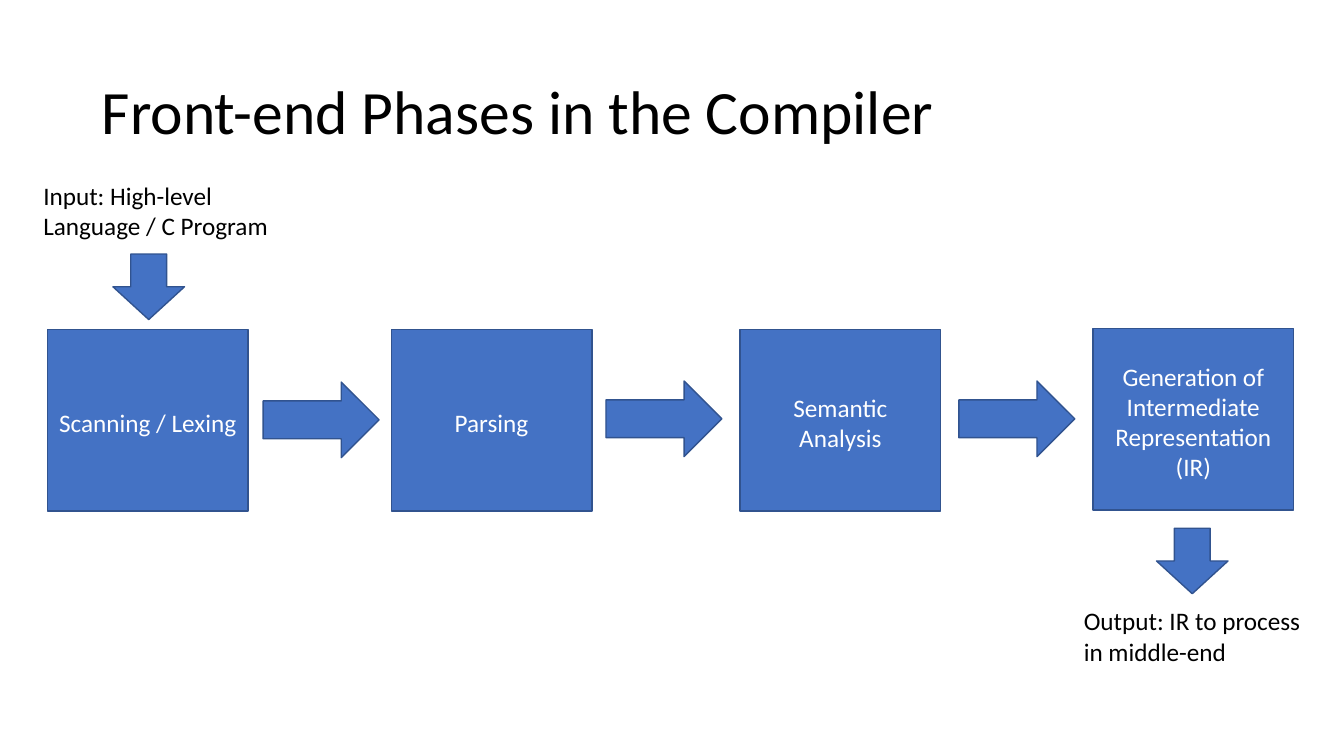
from pptx import Presentation
from pptx.dml.color import RGBColor
from pptx.enum.shapes import MSO_SHAPE
from pptx.enum.text import MSO_ANCHOR, PP_ALIGN
from pptx.util import Pt

PX = 9144
BLUE = RGBColor(0x44, 0x72, 0xC4)
DARK_BLUE = RGBColor(0x31, 0x53, 0x8F)
WHITE = RGBColor(0xFF, 0xFF, 0xFF)
BLACK = RGBColor(0x00, 0x00, 0x00)
RECTANGLE = MSO_SHAPE.RECTANGLE
RIGHT_ARROW = MSO_SHAPE.RIGHT_ARROW
DOWN_ARROW = MSO_SHAPE.DOWN_ARROW
TOP, MIDDLE = MSO_ANCHOR.TOP, MSO_ANCHOR.MIDDLE
LEFT, CENTER = PP_ALIGN.LEFT, PP_ALIGN.CENTER

presentation = Presentation()
presentation.slide_width = 1333 * PX
presentation.slide_height = 750 * PX
slide = presentation.slides.add_slide(presentation.slide_layouts[6])


def write_text(shape, text, size, color, alignment, anchor, side=0, top=0):
    frame = shape.text_frame
    frame_format = {
        "word_wrap": True,
        "vertical_anchor": anchor,
        "margin_left": side * PX,
        "margin_right": side * PX,
        "margin_top": top * PX,
        "margin_bottom": 0,
    }
    for name, value in frame_format.items():
        setattr(frame, name, value)
    paragraph = frame.paragraphs[0]
    paragraph.alignment = alignment
    run = paragraph.add_run()
    run.text = text
    for name, value in {"name": "Calibri", "size": Pt(size)}.items():
        setattr(run.font, name, value)
    run.font.color.rgb = color


def add_blue_shape(kind, left, top, width, height):
    shape = slide.shapes.add_shape(kind, left * PX, top * PX, width * PX, height * PX)
    shape.shadow.inherit = False
    shape.fill.solid()
    shape.fill.fore_color.rgb = BLUE
    shape.line.color.rgb = DARK_BLUE
    shape.line.width = Pt(1)
    return shape


labels = [
    ("Front-end Phases in the Compiler", 101, 72, 1200, 74, 44),
    ("Input: High-level Language / C Program", 43, 179, 230, 62, 18),
    ("Output: IR to process in middle-end", 1075, 601, 230, 62, 18),
]
for text, left, top, width, height, size in labels:
    label = slide.shapes.add_textbox(left * PX, top * PX, width * PX, height * PX)
    write_text(label, text, size, BLACK, LEFT, TOP)

phases = [
    ("Scanning / Lexing", 47, 327, 5),
    ("Parsing", 388, 327, 5),
    ("Semantic Analysis", 734, 327, 20),
    ("Generation of Intermediate Representation (IR)", 1084, 326, 20),
]
for text, left, top, side in phases:
    box = add_blue_shape(RECTANGLE, left, top, 199, 180)
    write_text(box, text, 18, WHITE, CENTER, MIDDLE, side, 4)

for left, top in [(261, 379), (601, 378), (951, 378)]:
    add_blue_shape(RIGHT_ARROW, left, top, 115, 75)

for left, top in [(112, 252), (1147, 524)]:
    add_blue_shape(DOWN_ARROW, left, top, 71, 65)

presentation.save("out.pptx")
